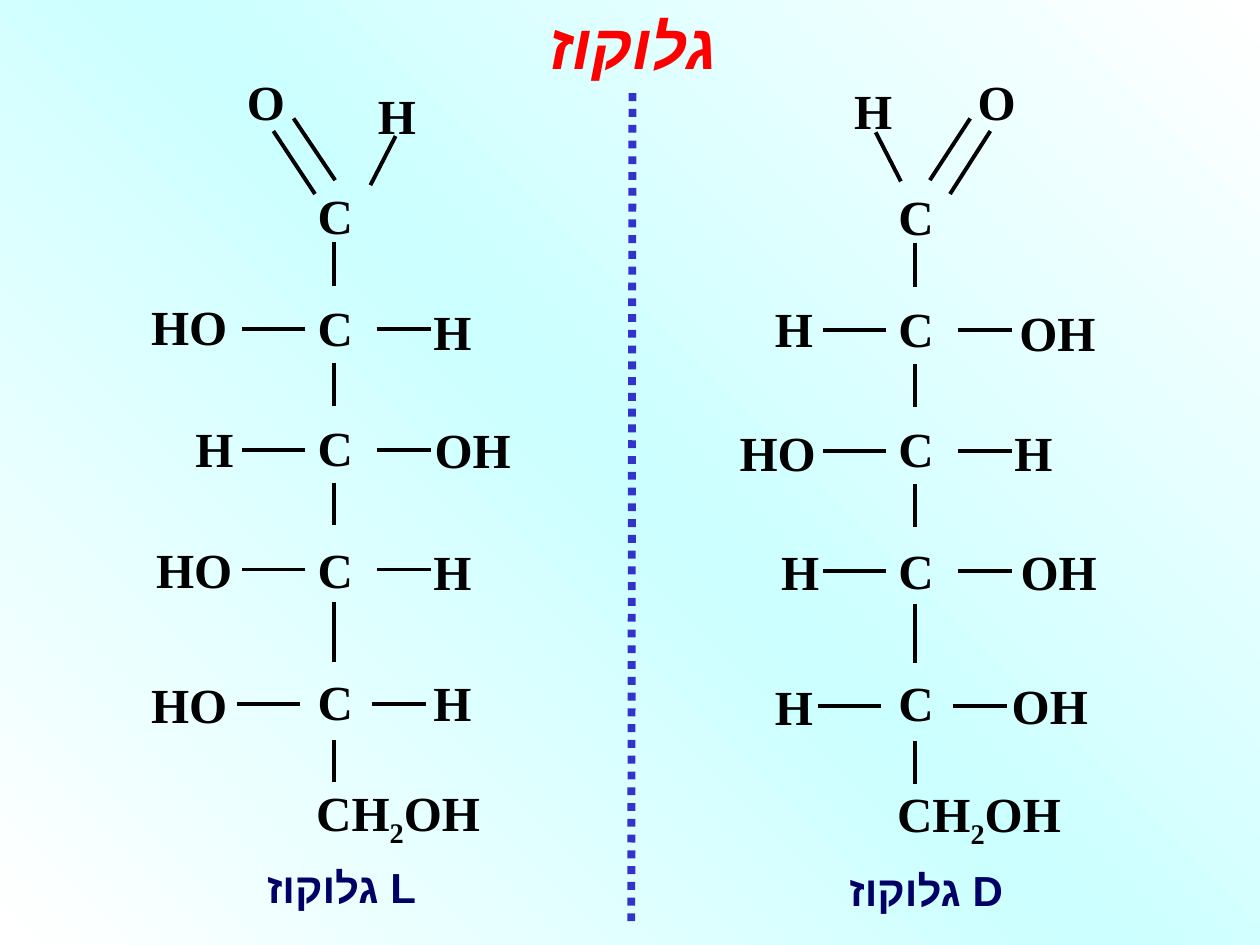
from copy import deepcopy
from lxml.etree import SubElement
from pptx import Presentation
from pptx.dml.color import RGBColor
from pptx.enum.dml import MSO_LINE
from pptx.enum.shapes import MSO_CONNECTOR
from pptx.enum.text import MSO_ANCHOR, MSO_AUTO_SIZE, PP_ALIGN
from pptx.oxml.ns import qn
from pptx.util import Inches, Pt

SERIF, SANS = "Times New Roman", "Arial"
BLACK, RED, NAVY, BLUE = "000000", "FF0000", "000066", "3333CC"

deck = Presentation()
deck.slide_width, deck.slide_height = Inches(10), Inches(7.5)
page = deck.slides.add_slide(deck.slide_layouts[5])


def write_text(box, spans, size, font, colour, hebrew=False):
    """Fill a box with one paragraph; digits become subscripts."""
    box.text_frame.auto_size = MSO_AUTO_SIZE.SHAPE_TO_FIT_TEXT
    box.text_frame.vertical_anchor = MSO_ANCHOR.TOP
    para = box.text_frame.paragraphs[0]
    para.alignment = PP_ALIGN.CENTER if hebrew else PP_ALIGN.LEFT
    if hebrew:
        box.text_frame.word_wrap = True
        para._p.get_or_add_pPr().set("rtl", "1")
    for text in spans:
        span = para.add_run()
        span.text = text
        span.font.size, span.font.name, span.font.bold = Pt(size), font, True
        span.font.color.rgb = RGBColor.from_string(colour)
        properties = span._r.get_or_add_rPr()
        SubElement(properties, qn("a:cs")).set("typeface", font)
        if text.isdigit():
            properties.set("baseline", "-25000")


def draw_line(x1, y1, x2, y2, colour=BLACK, width=2.25):
    line = page.shapes.add_connector(
        MSO_CONNECTOR.STRAIGHT, Inches(x1), Inches(y1), Inches(x2), Inches(y2))
    line.line.color.rgb = RGBColor.from_string(colour)
    line.line.width = Pt(width)
    SubElement(line._element.spPr, qn("a:effectLst"))
    return line


# Background: diagonal gradient, white - pale cyan - white
fill = page.background.fill
fill.gradient()
fill.gradient_angle = 45
stop_list = page.element.xpath(".//a:gsLst")[0]
stop_list.append(deepcopy(stop_list[-1]))
for stop, position, colour in zip(fill.gradient_stops, (0, 0.5, 1),
                                  ("FFFFFF", "CCFFFF", "FFFFFF")):
    stop.position = position
    stop.color.rgb = RGBColor.from_string(colour)

# Title
title = page.shapes.title
title.left, title.top = Inches(3.76), Inches(0)
title.width, title.height = Inches(2.53), Inches(0.7)
write_text(title, ["גלוקוז"], 36, SANS, RED, hebrew=True)
title.text_frame.paragraphs[0].runs[0].font.italic = True

# Divider between the two molecules
divider = draw_line(5.02, 0.74, 5.01, 7.31, BLUE, 4.5)
divider.line.dash_style = MSO_LINE.ROUND_DOT

# Each molecule: chain origin, caption, side groups and aldehyde bonds
molecules = [
    {"x": 7.13, "y": 1.48, "caption": ("D גלוקוז", 6.44, 6.81),
     "groups": [("O", 7.76, 0.57), ("H", 6.78, 0.64),
                ("H", 6.15, 2.37), ("OH", 8.09, 2.4),
                ("HO", 5.87, 3.35), ("H", 8.05, 3.35),
                ("H", 6.2, 4.3), ("OH", 8.1, 4.3),
                ("H", 6.15, 5.37), ("OH", 8.03, 5.36)],
     "aldehyde": [(7.54, 1.54, 7.86, 1.04), (7.38, 1.43, 7.7, 0.94),
                  (7.15, 1.44, 6.95, 1.05)]},
    {"x": 2.52, "y": 1.47, "caption": ("L גלוקוז", 1.8, 6.79),
     "groups": [("O", 1.96, 0.57), ("H", 3, 0.68),
                ("HO", 1.2, 2.35), ("H", 3.44, 2.39),
                ("H", 1.55, 3.32), ("OH", 3.45, 3.33),
                ("HO", 1.24, 4.28), ("H", 3.44, 4.3),
                ("HO", 1.2, 5.35), ("H", 3.44, 5.34)],
     "aldehyde": [(2.5, 1.54, 2.17, 1.04), (2.66, 1.43, 2.33, 0.94),
                  (2.94, 1.47, 3.14, 1.08)]},
]
# Offsets from the chain origin, shared by both molecules
carbon_tops = [0, 0.89, 1.84, 2.81, 3.86]
chain_bonds = [(0.45, 0.8), (1.41, 1.75), (2.36, 2.7), (3.31, 3.78), (4.4, 4.74)]
side_bonds = [(0, 1.14), (0, 2.1), (0, 3.05), (-0.04, 4.12)]
widths = {"O": 0.3, "H": 0.3, "C": 0.28, "OH": 0.73, "HO": 0.73, "CH2OH": 1.52}

for molecule in molecules:
    x, y = molecule["x"], molecule["y"]

    # Atoms and groups
    atoms = molecule["groups"] + [("C", x, y + top) for top in carbon_tops]
    atoms.append(("CH2OH", x - 0.01, y + 4.74))
    for name, left, top in atoms:
        box = page.shapes.add_textbox(
            Inches(left), Inches(top), Inches(widths[name]), Inches(0.47))
        frame = box.text_frame
        frame.margin_left = frame.margin_right = Inches(0)
        frame.margin_top = frame.margin_bottom = Inches(0)
        frame.word_wrap = len(name) > 1
        spans = ["CH", "2", "OH"] if name == "CH2OH" else [name]
        write_text(box, spans, 28, SERIF, BLACK)

    # Bonds
    for bond in molecule["aldehyde"]:
        draw_line(*bond)
    for start, end in chain_bonds:
        draw_line(x + 0.13, y + start, x + 0.13, y + end)
    for shift, drop in side_bonds:
        for inner, outer in ((-0.1, -0.6), (0.47, 0.9)):
            draw_line(x + shift + inner, y + drop, x + shift + outer, y + drop)

    # Caption
    text, left, top = molecule["caption"]
    caption = page.shapes.add_textbox(
        Inches(left), Inches(top), Inches(1.82), Inches(0.5))
    write_text(caption, [text], 24, SANS, NAVY, hebrew=True)

deck.save("out.pptx")
